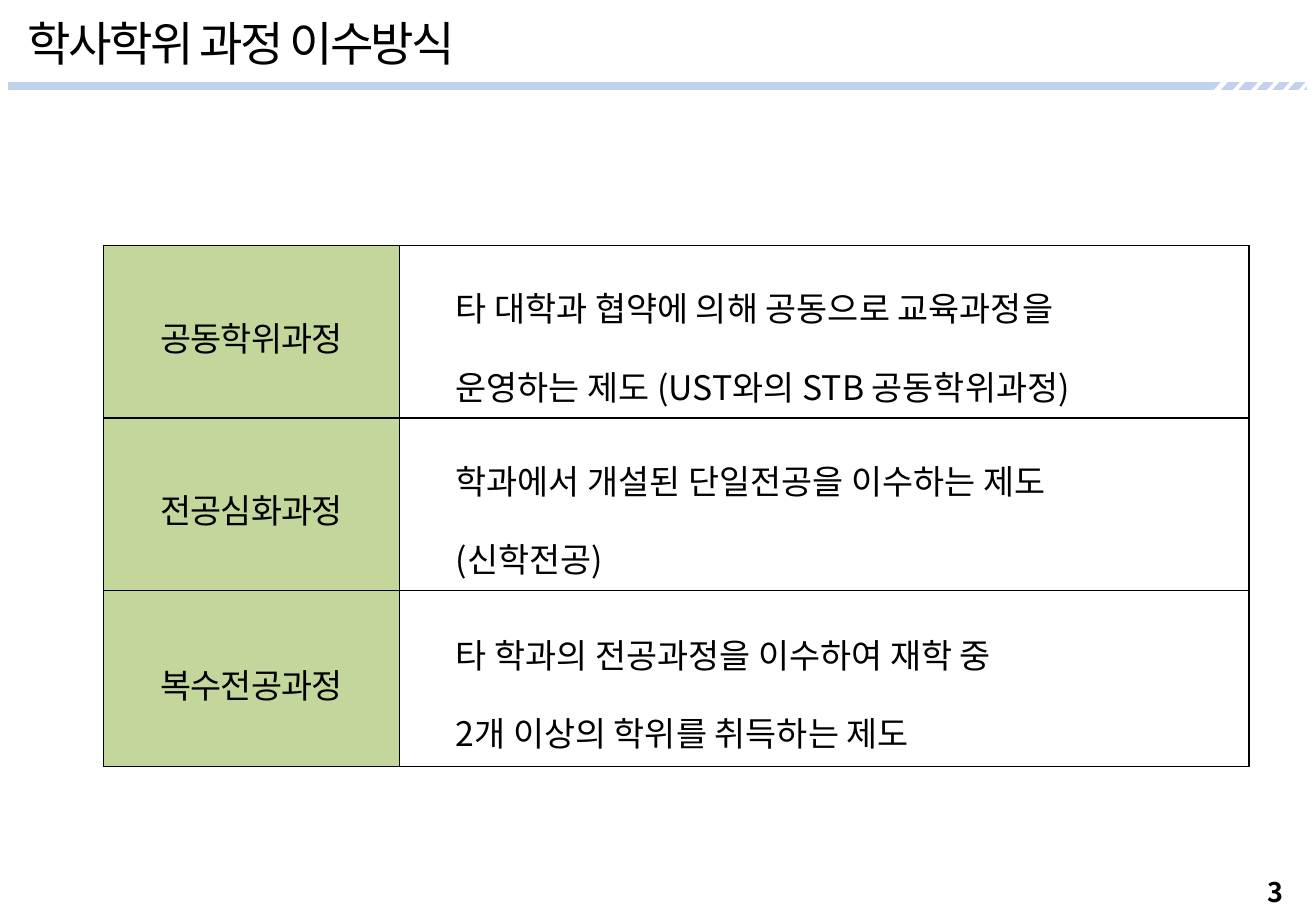
import pptx
import pptx.dml.color
import pptx.enum.shapes
import pptx.enum.text
import pptx.oxml
import pptx.oxml.ns
import pptx.util

PX = 9144
FONT = "Noto Sans CJK KR"
HUES = {"ink": "000000", "rule": "C2D1ED", "paper": "FFFFFF", "head": "C3D69B"}
ALIGN = pptx.enum.text.PP_ALIGN
ROWS = [
    ("공동학위과정", ["타 대학과 협약에 의해 공동으로 교육과정을",
                "운영하는 제도 (UST와의 STB 공동학위과정)"]),
    ("전공심화과정", ["학과에서 개설된 단일전공을 이수하는 제도", "(신학전공)"]),
    ("복수전공과정", ["타 학과의 전공과정을 이수하여 재학 중",
                "2개 이상의 학위를 취득하는 제도"]),
]


def px(count):
    """Turn px into EMU."""
    return pptx.util.Emu(count * PX)


def hue(name):
    """Look up a colour by name."""
    return pptx.dml.color.RGBColor.from_string(HUES[name])


def node(parent, tag, **attrs):
    """Append an XML element to a parent."""
    child = pptx.oxml.parse_xml(f"<{tag} {pptx.oxml.ns.nsdecls('a')}/>")
    for key, value in attrs.items():
        child.set(key, str(value))
    parent.append(child)
    return child


def write(para, text, size=20, bold=False, track=0, align=None, lead=None, indent=0):
    """Put formatted text into a paragraph."""
    if indent:
        props = para._p.get_or_add_pPr()
        props.set("marL", str(px(indent)))
        props.set("indent", "0")
    para.alignment = align
    para.line_spacing = lead
    run = para.add_run()
    run.text = text
    run.font.size = pptx.util.Pt(size)
    run.font.bold = bold
    run.font.color.rgb = hue("ink")
    run.font.name = FONT
    props = run._r.get_or_add_rPr()
    props.set("spc", str(round(track * 100)))
    node(props, "a:ea", typeface=FONT)


def label(slide, box, text, wrap=True, **style):
    """Add a text box with one line."""
    frame = slide.shapes.add_textbox(*map(px, box)).text_frame
    frame.word_wrap = wrap
    write(frame.paragraphs[0], text, **style)


def line(slide, start, end, color, width):
    """Add a straight line."""
    kind = pptx.enum.shapes.MSO_CONNECTOR.STRAIGHT
    link = slide.shapes.add_connector(kind, *map(px, start + end))
    link.line.color.rgb = hue(color)
    link.line.width = pptx.util.Pt(width)
    node(link._element.spPr, "a:effectLst")


def band(slide):
    """Draw the rule under the title with its slanted cuts."""
    line(slide, (1076, 71), (7, 71), "rule", 4.5)
    for left in (1000, 1015, 1030, 1043, 1056, 1069):
        line(slide, (left, 76), (left + 9, 66), "paper", 3 if left == 1000 else 2.25)


def edge(cell):
    """Give a cell thin borders on all sides."""
    props = cell._tc.get_or_add_tcPr()
    for side in "LRTB":
        border = node(props, f"a:ln{side}", w=pptx.util.Pt(1))
        node(node(border, "a:solidFill"), "a:srgbClr", val=HUES["ink"])


def fill(cell, lines, color=None, **style):
    """Set the text, border and fill of a cell."""
    cell.margin_left = cell.margin_right = px(7)
    cell.margin_top = cell.margin_bottom = px(2)
    cell.vertical_anchor = pptx.enum.text.MSO_ANCHOR.MIDDLE
    edge(cell)
    if color:
        cell.fill.solid()
        cell.fill.fore_color.rgb = hue(color)
    else:
        cell.fill.background()
    frame = cell.text_frame
    for spot, text in enumerate(lines):
        para = frame.add_paragraph() if spot else frame.paragraphs[0]
        write(para, text, **style)


def grid(slide):
    """Build the table of degree courses."""
    box = map(px, (85, 202, 943, 429))
    table = slide.shapes.add_table(len(ROWS), 2, *box).table
    table.first_row = table.horz_banding = False
    for col, width in zip(table.columns, (244, 699)):
        col.width = px(width)
    for row, high, (name, lines) in zip(table.rows, (142, 142, 145), ROWS):
        row.height = px(high)
        head, body = row.cells
        fill(head, [name], "head", track=-0.5, align=ALIGN.CENTER, lead=1.2)
        fill(body, lines, align=ALIGN.JUSTIFY, lead=1.6, indent=39)


def main():
    """Build and save the slide."""
    deck = pptx.Presentation()
    deck.slide_width, deck.slide_height = px(1083), px(750)
    slide = deck.slides.add_slide(deck.slide_layouts[6])
    label(slide, (1033, 716, 75, 37), "3", wrap=False, size=16, bold=True)
    band(slide)
    label(slide, (13, 7, 563, 57), "학사학위 과정 이수방식", size=28, track=-1.5)
    grid(slide)
    deck.save("out.pptx")


if __name__ == "__main__":
    main()
